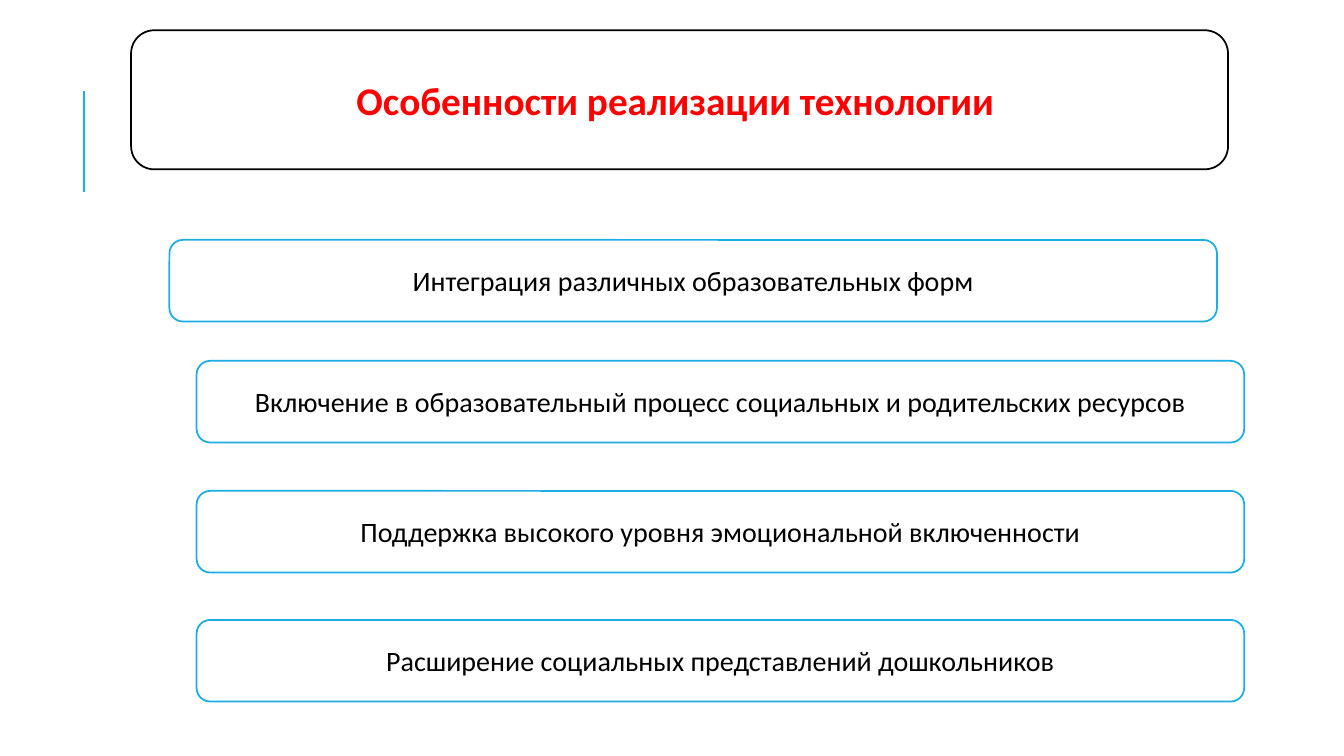
"""Build the slide on the features of implementing the technology."""
from dataclasses import dataclass

from lxml.etree import SubElement
from pptx import Presentation
from pptx.dml.color import RGBColor
from pptx.enum.shapes import MSO_CONNECTOR, MSO_SHAPE
from pptx.enum.text import MSO_ANCHOR, PP_ALIGN
from pptx.oxml.ns import qn
from pptx.util import Pt

PX = 9144


@dataclass(frozen=True)
class Theme:
    """Colours, font and sizes of the slide."""
    paper: RGBColor = RGBColor(0xFF, 0xFF, 0xFF)
    ink: RGBColor = RGBColor(0x00, 0x00, 0x00)
    accent: RGBColor = RGBColor(0x1C, 0xAD, 0xE4)
    title: RGBColor = RGBColor(0xFF, 0x00, 0x00)
    font: str = "Calibri"
    title_size: Pt = Pt(28)
    body_size: Pt = Pt(20)
    border: Pt = Pt(1.25)
    rule: Pt = Pt(1.5)


THEME = Theme()
TITLE = "Особенности реализации технологии "
TITLE_FORMAT = {"size": THEME.title_size, "bold": True}
BODY_FORMAT = {"size": THEME.body_size, "bold": False}
FEATURE_WIDTH, FEATURE_HEIGHT = 1039, 81
FEATURES = [
    (168, 238, "Интеграция различных образовательных форм"),
    (195, 358, "Включение в образовательный процесс социальных и родительских ресурсов"),
    (195, 487, "Поддержка высокого уровня эмоциональной включенности"),
    (195, 615, "Расширение социальных представлений дошкольников"),
]


def px(*values):
    """Turn px lengths into EMU."""
    return [value * PX for value in values]


def set_format(target, values):
    """Set each named attribute on the target."""
    for name, value in values.items():
        setattr(target, name, value)


def add_rule(s, *ends):
    """Add the accent line beside the title."""
    line = s.shapes.add_connector(MSO_CONNECTOR.STRAIGHT, *px(*ends))
    line.line.color.rgb = THEME.accent
    line.line.width = THEME.rule
    SubElement(line._element.spPr, qn("a:effectLst"))


def add_card(s, box, text, border, color, font_format):
    """Add a rounded card with centred text."""
    sp = s.shapes.add_shape(MSO_SHAPE.ROUNDED_RECTANGLE, *px(*box))
    sp.shadow.inherit = False
    sp.fill.solid()
    sp.fill.fore_color.rgb = THEME.paper
    sp.line.color.rgb = border
    sp.line.width = THEME.border
    tf = sp.text_frame
    set_format(tf, {"word_wrap": True, "vertical_anchor": MSO_ANCHOR.MIDDLE})
    p = tf.paragraphs[0]
    p.alignment = PP_ALIGN.CENTER
    r = p.add_run()
    r.text = text
    set_format(r.font, {"name": THEME.font, **font_format})
    r.font.color.rgb = color


def main():
    """Build and save the slide."""
    prs = Presentation()
    prs.slide_width, prs.slide_height = px(1333, 750)
    s = prs.slides.add_slide(prs.slide_layouts[6])
    add_rule(s, 83, 190, 83, 90)
    add_card(s, (130, 30, 1088, 138), TITLE, THEME.ink, THEME.title, TITLE_FORMAT)
    for left, top, text in FEATURES:
        box = (left, top, FEATURE_WIDTH, FEATURE_HEIGHT)
        add_card(s, box, text, THEME.accent, THEME.ink, BODY_FORMAT)
    prs.save("out.pptx")


if __name__ == "__main__":
    main()
